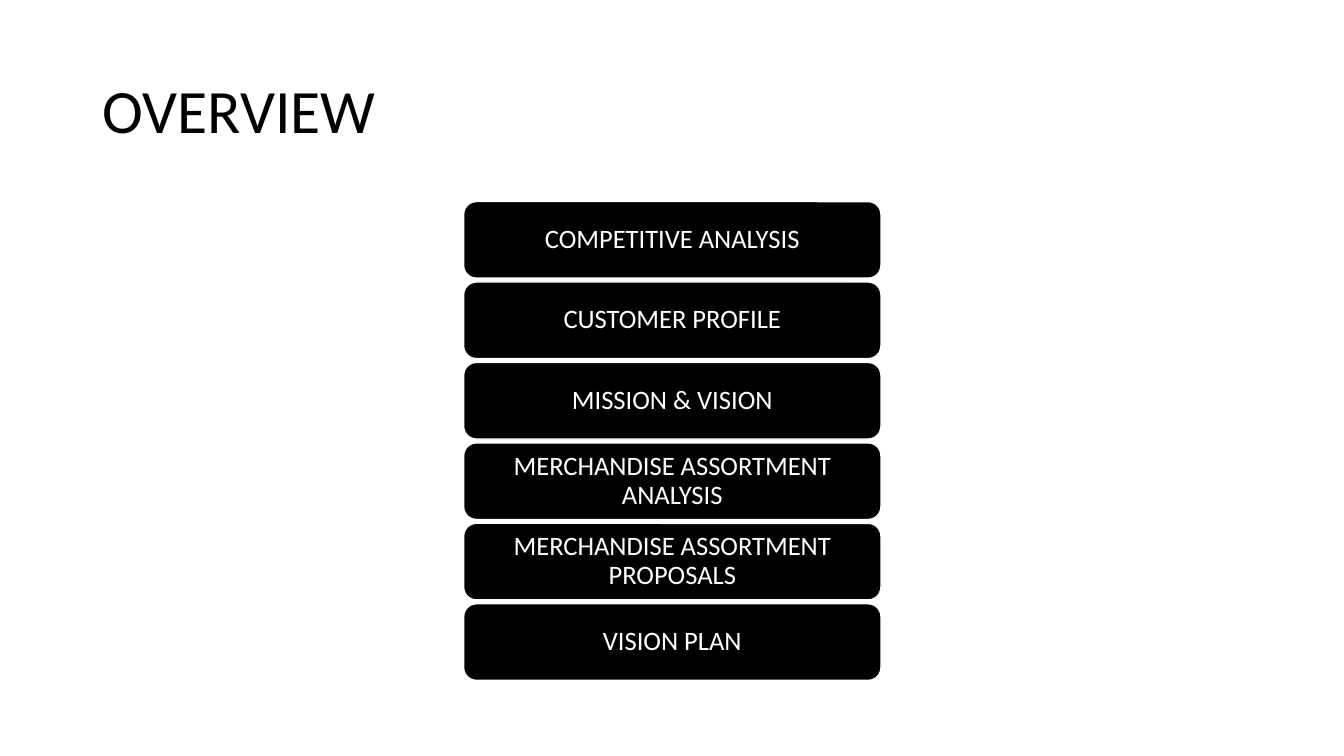
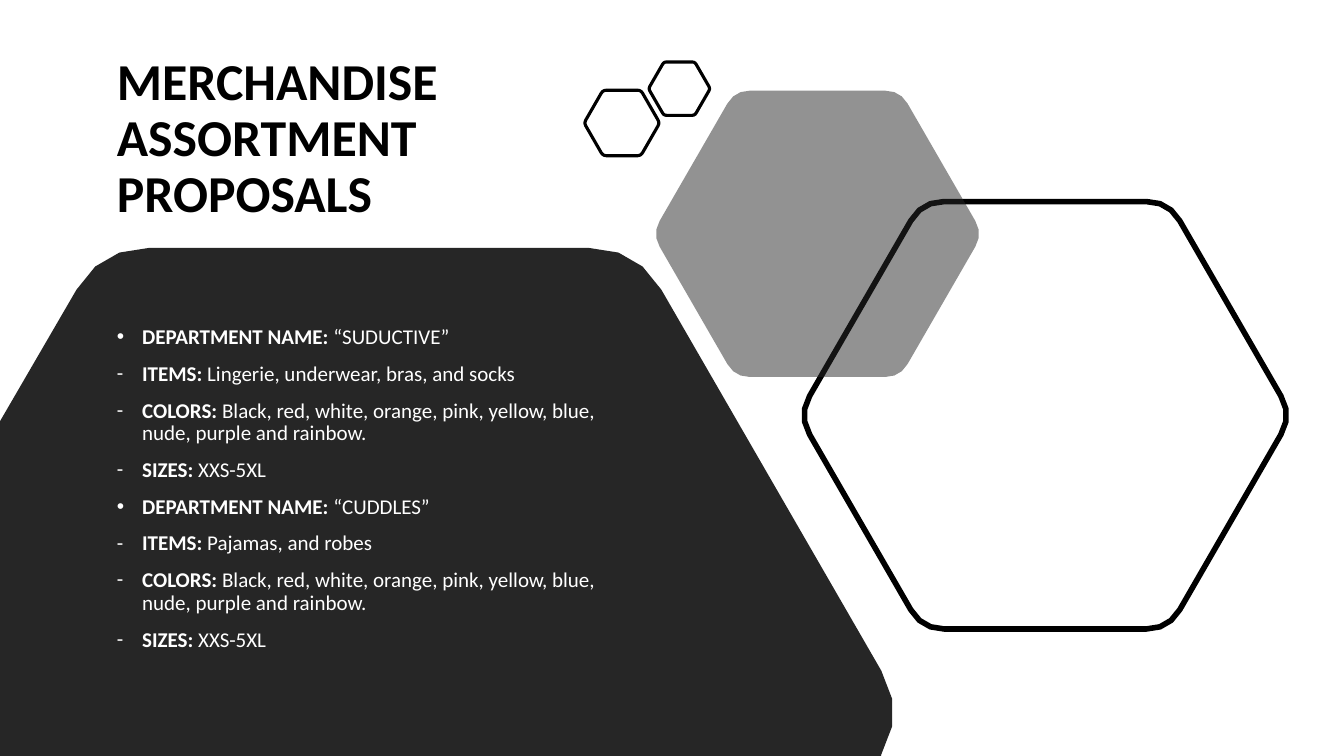
"""Build the overview slide and the merchandise assortment proposals slide."""
from math import cos, radians, sin, sqrt

from lxml.etree import SubElement
from pptx import Presentation
from pptx.dml.color import RGBColor as Rgb
from pptx.enum.shapes import MSO_SHAPE as Shape
from pptx.enum.text import MSO_ANCHOR as Anchor, MSO_AUTO_SIZE as AutoSize, PP_ALIGN as Align
from pptx.oxml.ns import qn
from pptx.util import Inches, Pt

COLORS = {"ink": "000000", "panel": "262626", "paper": "FFFFFF"}
FONT = "Calibri"
SLIDE_WIDTH, SLIDE_HEIGHT = 40 / 3, 7.5


def add_run(para, text, size, color, bold=False):
    """Add one formatted run to a paragraph."""
    para.line_spacing = 0.9
    span = para.add_run()
    span.text = text
    span.font.name = FONT
    span.font.size = Pt(size)
    span.font.bold = bold
    span.font.color.rgb = Rgb.from_string(COLORS[color])


def hexagon_points(center_x, center_y, height):
    """Return the outline of a regular hexagon with rounded corners."""
    radius, cut, steps = height / sqrt(3), 0.09, 3
    corners = [(center_x + radius * cos(radians(angle)), center_y + radius * sin(radians(angle)))
               for angle in range(240, 600, 60)]
    points = []
    for index, corner in enumerate(corners):
        before, after = corners[index - 1], corners[(index + 1) % 6]
        for step in range(steps + 1):
            t = step / steps
            points.append(tuple(
                c + cut * ((1 - t) ** 2 * (b - c) + t ** 2 * (a - c))
                for b, c, a in zip(before, corner, after)))
    return points


deck = Presentation()
deck.slide_width, deck.slide_height = Inches(SLIDE_WIDTH), Inches(SLIDE_HEIGHT)

pages = []
for layout, title_text, area, size, bold in [
    (5, "OVERVIEW", (0.92, 0.4, 11.5, 1.45), 44, False),
    (1, "MERCHANDISE ASSORTMENT PROPOSALS", (1.06, 0.49, 4.68, 1.8), 37, True),
]:
    page = deck.slides.add_slide(deck.slide_layouts[layout])
    title = page.shapes.title
    title.left, title.top, title.width, title.height = map(Inches, area)
    title.text_frame.auto_size = AutoSize.NONE
    title.text_frame.vertical_anchor = Anchor.MIDDLE
    para = title.text_frame.paragraphs[0]
    para.alignment = Align.LEFT
    add_run(para, title_text, size, "ink", bold)
    pages.append(page)
overview, proposals = pages

topics = ["COMPETITIVE ANALYSIS", "CUSTOMER PROFILE", "MISSION & VISION",
          "MERCHANDISE ASSORTMENT ANALYSIS", "MERCHANDISE ASSORTMENT PROPOSALS", "VISION PLAN"]
first_top, last_top = 2, 5.99
pitch = (last_top - first_top) / (len(topics) - 1)
for row, topic in enumerate(topics):
    box = overview.shapes.add_shape(Shape.ROUNDED_RECTANGLE, Inches(4.6),
                                    Inches(first_top + row * pitch), Inches(4.14), Inches(0.76))
    box.shadow.inherit = False
    box.fill.solid()
    box.fill.fore_color.rgb = Rgb.from_string(COLORS["ink"])
    box.line.color.rgb = Rgb.from_string(COLORS["paper"])
    box.line.width = Pt(1)
    frame = box.text_frame
    frame.word_wrap = True
    frame.vertical_anchor = Anchor.MIDDLE
    frame.margin_left = frame.margin_right = Inches(0.08)
    frame.margin_top = frame.margin_bottom = Inches(0.04)
    frame.paragraphs[0].alignment = Align.CENTER
    add_run(frame.paragraphs[0], topic, 19, "paper")

panel_points = [(x, y) for x, y in hexagon_points(3.66, 7.07, 9.22) if x >= 0 and y <= SLIDE_HEIGHT]
panel_points += [(8.74, SLIDE_HEIGHT), (0, SLIDE_HEIGHT), (0, 4.18)]
for points, fill, opacity, line_width in [
    (panel_points, "panel", 100, 0),
    (hexagon_points(10.37, 4.12, 4.24), None, 100, 4),
    (hexagon_points(8.11, 2.32, 2.84), "panel", 50, 0),
    (hexagon_points(6.17, 1.22, 0.65), None, 100, 2.25),
    (hexagon_points(6.74, 0.88, 0.53), None, 100, 2.25),
]:
    outline = [(Inches(x), Inches(y)) for x, y in points]
    builder = proposals.shapes.build_freeform(*outline[0])
    builder.add_line_segments(outline[1:], close=True)
    hexagon = builder.convert_to_shape()
    hexagon.shadow.inherit = False
    if fill:
        hexagon.fill.solid()
        hexagon.fill.fore_color.rgb = Rgb.from_string(COLORS[fill])
        if opacity < 100:
            color = hexagon.element.spPr.find(qn("a:solidFill"))[0]
            SubElement(color, qn("a:alpha"), val=str(opacity * 1000))
    else:
        hexagon.fill.background()
    if line_width:
        hexagon.line.color.rgb = Rgb.from_string(COLORS["ink"])
        hexagon.line.width = Pt(line_width)
    else:
        hexagon.line.fill.background()

body = proposals.placeholders[1]
body.left, body.top, body.width, body.height = map(Inches, (1.06, 3.19, 5.19, 3.38))
body.element.getparent().append(body.element)
frame = body.text_frame
frame.auto_size = AutoSize.NONE
frame.vertical_anchor = Anchor.TOP
shades = "Black, red, white, orange, pink, yellow, blue, nude, purple and rainbow."
departments = [("“SUDUCTIVE”", "Lingerie, underwear, bras, and socks"),
               ("“CUDDLES”", "Pajamas, and robes")]
entries = []
for name, items in departments:
    entries += [("•", "DEPARTMENT NAME: ", name), ("-", "ITEMS: ", items),
                ("-", "COLORS: ", shades), ("-", "SIZES: ", "XXS-5XL")]
for index, (bullet, label, detail) in enumerate(entries):
    para = frame.add_paragraph() if index else frame.paragraphs[0]
    para.space_before = Pt(10)
    add_run(para, label, 15, "paper", True)
    add_run(para, detail, 15, "paper")
    properties = para._p.get_or_add_pPr()
    properties.set("marL", str(Inches(0.25)))
    properties.set("indent", str(Inches(-0.25)))
    bullet_font = "Arial" if bullet == "•" else FONT
    SubElement(properties, qn("a:buFont"), typeface=bullet_font)
    SubElement(properties, qn("a:buChar"), char=bullet)

deck.save("out.pptx")
